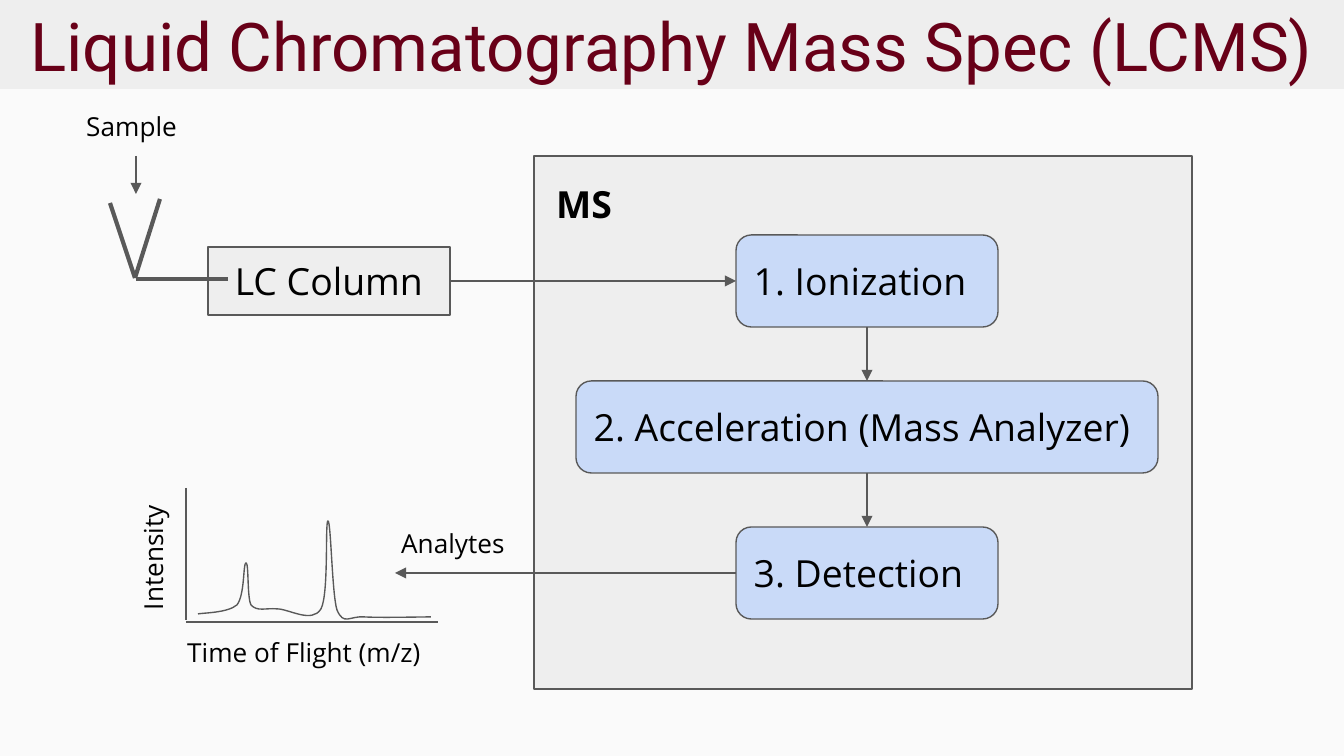
from itertools import pairwise

from lxml.etree import SubElement
from pptx import Presentation
from pptx.dml.color import RGBColor
from pptx.enum.shapes import MSO_CONNECTOR as Link, MSO_SHAPE as Shape
from pptx.enum.text import MSO_ANCHOR as Anchor, PP_ALIGN as Align
from pptx.oxml.ns import qn
from pptx.util import Pt

PX = 914400 / 134.4
WIDTH, HEIGHT = 1344, 756

PAPER = RGBColor(0xFA, 0xFA, 0xFA)
PALE = RGBColor(0xEE, 0xEE, 0xEE)
BLUE = RGBColor(0xC9, 0xDA, 0xF8)
GRAY = RGBColor(0x59, 0x59, 0x59)
WINE = RGBColor(0x68, 0x00, 0x18)
BLACK = RGBColor(0, 0, 0)

TITLE = "Liquid Chromatography Mass Spec (LCMS)"
STAGES = [  # text, width
    ("1. Ionization", 262),
    ("2. Acceleration (Mass Analyzer)", 582),
    ("3. Detection", 262),
]
MID, TOP, TALL, STEP = 867, 235, 92, 146

LABELS = [  # text, left, top, width, height, size, bold, rotation
    ("Sample", 73, 97, 126, 59, 14, False, 0),
    ("MS", 543, 168, 101, 72, 20, True, 0),
    ("Time of Flight (m/z)", 174, 623, 277, 59, 14, False, 0),
    ("Intensity", 83, 524, 140, 59, 14, False, 270),
    ("Analytes", 388, 514, 142, 59, 14, False, 0),
]
FUNNEL = [
    ((136, 279), (228, 279)),
    ((135, 278), (160, 199)),
    ((135, 278), (110, 203)),
]
AXES = [
    ((186, 488), (186, 620)),
    ((186, 622), (438, 622)),
]
START = (198, 614)
CURVES = [  # two control points and an end point each
    ((203, 613), (228, 613), (237, 605)),
    ((245, 595), (243, 563), (246, 563)),
    ((249, 563), (247, 597), (251, 605)),
    ((257, 612), (266, 608), (277, 609)),
    ((289, 609), (312, 624), (321, 609)),
    ((329, 594), (325, 521), (328, 521)),
    ((331, 521), (332, 594), (337, 610)),
    ((344, 626), (349, 616), (364, 617)),
    ((380, 618), (421, 617), (431, 617)),
]


def emu(*vals):
    return [round(v * PX) for v in vals]


def write(shape, text, size=20, font="Open Sans", color=BLACK, bold=False,
          align=Align.LEFT, anchor=Anchor.MIDDLE):
    frame = shape.text_frame
    frame.word_wrap = True
    frame.vertical_anchor = anchor
    inset = round(13.44 * PX)
    frame.margin_left = frame.margin_right = inset
    frame.margin_top = frame.margin_bottom = inset
    para = frame.paragraphs[0]
    para.alignment = align
    run = para.add_run()
    run.text = text
    run.font.size = Pt(size)
    run.font.name = font
    run.font.bold = bold
    run.font.color.rgb = color


def stroke(shape, width=0.75):
    shape.line.color.rgb = GRAY
    shape.line.width = Pt(width)


def box(shapes, kind, fill, *place):
    shape = shapes.add_shape(kind, *emu(*place))
    shape.shadow.inherit = False
    shape.fill.solid()
    shape.fill.fore_color.rgb = fill
    stroke(shape)
    return shape


def line(shapes, start, end, width=0.75, arrow=False):
    """Draw a line; each end is a point or a (shape, side) pair."""
    glue = [not isinstance(e[0], int) for e in (start, end)]
    first = (0, 0) if glue[0] else start
    last = (0, 0) if glue[1] else end
    link = shapes.add_connector(Link.STRAIGHT, *emu(*first, *last))
    if glue[0]:
        link.begin_connect(*start)
    if glue[1]:
        link.end_connect(*end)
    stroke(link, width)
    props = link._element.spPr
    if arrow:
        SubElement(props.find(qn("a:ln")), qn("a:tailEnd"), type="triangle")
    SubElement(props, qn("a:effectLst"))


def plot(shapes, start, curves):
    """Outline the end points, then bend each segment into a cubic curve."""
    pen = shapes.build_freeform(*emu(*start))
    pen.add_line_segments([emu(*c[-1]) for c in curves], close=False)
    shape = pen.convert_to_shape()
    shape.shadow.inherit = False
    shape.fill.background()
    stroke(shape)
    for seg, curve in zip(list(shape._element.iter(qn("a:lnTo"))), curves):
        bend = seg.makeelement(qn("a:cubicBezTo"))
        for point in curve:
            x, y = emu(*point)
            SubElement(bend, qn("a:pt"), x=str(x - shape.left),
                       y=str(y - shape.top))
        seg.getparent().replace(seg, bend)


def main():
    deck = Presentation()
    deck.slide_width, deck.slide_height = emu(WIDTH, HEIGHT)
    slide = deck.slides.add_slide(deck.slide_layouts[5])
    slide.background.fill.solid()
    slide.background.fill.fore_color.rgb = PAPER
    shapes = slide.shapes

    title = shapes.title
    title.left, title.top, title.width, title.height = emu(0, 0, WIDTH, 89)
    title.fill.solid()
    title.fill.fore_color.rgb = PALE
    write(title, TITLE, size=36, font="Roboto", color=WINE, align=Align.CENTER)

    box(shapes, Shape.RECTANGLE, PALE, 534, 156, 658, 533)
    stages = []
    for i, (text, wide) in enumerate(STAGES):
        stage = box(shapes, Shape.ROUNDED_RECTANGLE, BLUE,
                    MID - wide / 2, TOP + i * STEP, wide, TALL)
        write(stage, text)
        stages.append(stage)
    column = box(shapes, Shape.RECTANGLE, PALE, 208, 247, 242, 68)
    write(column, "LC Column", align=Align.CENTER)

    for start, end in FUNNEL:
        line(shapes, start, end, width=2.25)
    for start, end in AXES:
        line(shapes, start, end)
    line(shapes, (136, 156), (136, 194), arrow=True)
    line(shapes, (column, 3), (stages[0], 1), arrow=True)
    for upper, lower in pairwise(stages):
        line(shapes, (upper, 2), (lower, 0), arrow=True)
    line(shapes, (stages[-1], 1), (395, 573), arrow=True)
    plot(shapes, START, CURVES)

    for text, x, y, w, h, size, bold, turn in LABELS:
        label = shapes.add_textbox(*emu(x, y, w, h))
        label.rotation = turn
        write(label, text, size=size, bold=bold, anchor=Anchor.TOP)

    deck.save("out.pptx")


if __name__ == "__main__":
    main()
